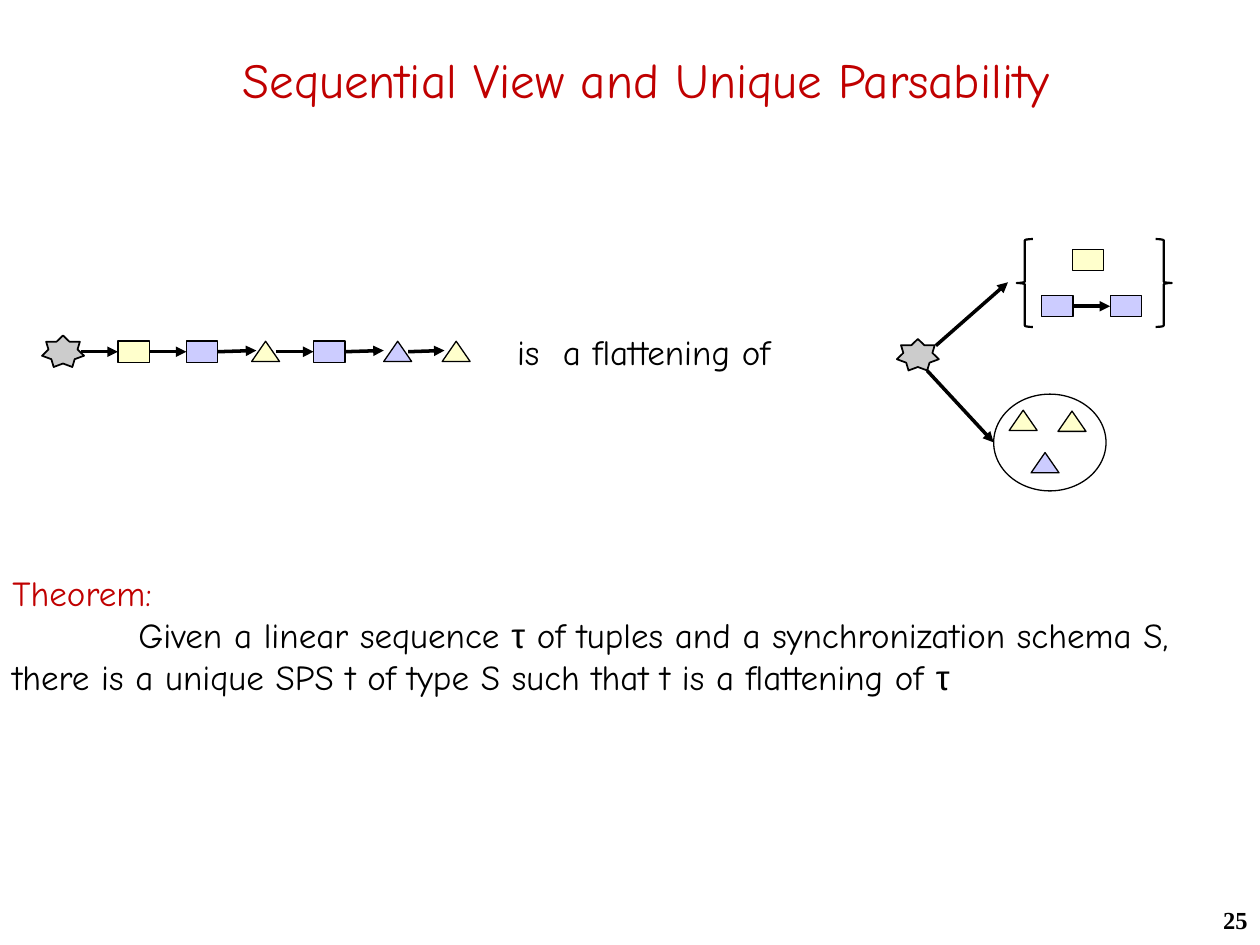
from dataclasses import dataclass

from lxml import etree
from pptx import Presentation
from pptx.dml.color import RGBColor
from pptx.enum import shapes as s, text as t
from pptx.oxml import ns
from pptx.util import Pt


@dataclass(frozen=True)
class Theme:
    ink: str = "000000"
    accent: str = "C00000"
    yellow: str = "FFFFCC"
    blue: str = "CCCCFF"
    grey: str = "CCCCCC"
    body_font: str = "Comic Neue"
    greek_font: str = "Arial"
    number_font: str = "Times New Roman"
    title_size: float = 28
    body_size: float = 20
    number_size: float = 14


THEME = Theme()
KIND = s.MSO_SHAPE
STAR = (KIND.STAR_7_POINT, 24, 18, THEME.grey, 1)
YELLOW_BOX = (KIND.RECTANGLE, 18, 12.2, THEME.yellow, 0.75)
BLUE_BOX = (KIND.RECTANGLE, 18, 12.2, THEME.blue, 0.75)
YELLOW_TRIANGLE = (KIND.ISOSCELES_TRIANGLE, 16, 11.6, THEME.yellow, 0.75)
BLUE_TRIANGLE = (KIND.ISOSCELES_TRIANGLE, 16, 11.6, THEME.blue, 0.75)
ARROW_RUN, ARROW_RISE = 20.8, 0.7


def write(slide, box, paragraphs, size=THEME.body_size, color=THEME.ink,
          font=THEME.body_font, bold=False, align=t.PP_ALIGN.LEFT,
          anchor=t.MSO_ANCHOR.TOP, tab=None):
    frame = slide.shapes.add_textbox(*map(Pt, box)).text_frame
    frame.word_wrap = True
    frame.vertical_anchor = anchor
    for index, pieces in enumerate(paragraphs):
        paragraph = frame.paragraphs[0] if index == 0 else frame.add_paragraph()
        paragraph.alignment = align
        if tab:
            stops = etree.SubElement(paragraph._p.get_or_add_pPr(), ns.qn("a:tabLst"))
            etree.SubElement(stops, ns.qn("a:tab"), pos=str(Pt(tab)), algn="l")
        for words, changes in pieces:
            run = paragraph.add_run()
            run.text = words
            run.font.name = changes.get("font", font)
            run.font.size = Pt(size)
            run.font.bold = bold
            run.font.color.rgb = RGBColor.from_string(changes.get("color", color))


def draw(canvas, left, top, look):
    kind, width, height, fill, line = look
    node = canvas.add_shape(kind, Pt(left), Pt(top), Pt(width), Pt(height))
    node.shadow.inherit = False
    if fill:
        node.fill.solid()
        node.fill.fore_color.rgb = RGBColor.from_string(fill)
    else:
        node.fill.background()
    node.line.color.rgb = RGBColor.from_string(THEME.ink)
    node.line.width = Pt(line)
    return node


def arrow(canvas, start, end, source=None, target=None):
    link = canvas.add_connector(s.MSO_CONNECTOR.STRAIGHT, *map(Pt, start + end))
    link.line.color.rgb = RGBColor.from_string(THEME.ink)
    link.line.width = Pt(2)
    properties = link._element.spPr
    etree.SubElement(properties.get_or_add_ln(), ns.qn("a:tailEnd"), type="triangle")
    etree.SubElement(properties, ns.qn("a:effectLst"))
    if source is not None:
        link.begin_connect(source, 3)
    if target is not None:
        link.end_connect(target, 1)


def short_arrow(canvas, left, top, source=None, target=None):
    arrow(canvas, (left, top), (left + ARROW_RUN, top - ARROW_RISE), source, target)


def draw_sequence(slide):
    canvas = slide.shapes.add_group_shape().shapes
    tuples = [(24, 191.7, STAR), (67.4, 194.9, YELLOW_BOX), (106.5, 194.9, BLUE_BOX),
              (143.8, 195, YELLOW_TRIANGLE), (179.2, 194.9, BLUE_BOX),
              (219.3, 195, BLUE_TRIANGLE), (252.7, 195, YELLOW_TRIANGLE)]
    nodes = [draw(canvas, *place) for place in tuples]
    boxes = [node if place[2][0] == KIND.RECTANGLE else None
             for node, place in zip(nodes, tuples)]
    starts = [46.2, 86.4, 125.7, 157.7, 198.5, 233.2]
    for left, source, target in zip(starts, boxes, boxes[1:]):
        short_arrow(canvas, left, 201, source, target)


def draw_series_parallel(slide):
    canvas = slide.shapes
    draw(canvas, 567.8, 225.2, (KIND.OVAL, 64.2, 55.3, None, 0.75))
    for left, top, look in [(589.2, 258.6, BLUE_TRIANGLE),
                            (576.7, 234.4, YELLOW_TRIANGLE),
                            (604.6, 234.9, YELLOW_TRIANGLE),
                            (512.5, 193.7, STAR), (612.8, 142.5, YELLOW_BOX)]:
        draw(canvas, left, top, look)
    first, second = [draw(canvas, left, 168.9, BLUE_BOX) for left in (595.2, 634.4)]
    short_arrow(canvas, 614.2, 175.6, first, second)
    arrow(canvas, (534.8, 197.5), (576, 161.3))
    arrow(canvas, (529.8, 211.8), (567.8, 252.8))
    for left, brace in [(581, KIND.LEFT_BRACE), (660.4, KIND.RIGHT_BRACE)]:
        draw(canvas, left, 136.6, (brace, 9.2, 50.3, None, 1.25))


def main():
    deck = Presentation()
    deck.slide_width, deck.slide_height = Pt(720), Pt(540)
    slide = deck.slides.add_slide(deck.slide_layouts[6])
    greek = ("τ", {"font": THEME.greek_font})
    write(slide, (18, 24, 702, 42), [[("Sequential View and Unique Parsability", {})]],
          size=THEME.title_size, color=THEME.accent,
          align=t.PP_ALIGN.CENTER, anchor=t.MSO_ANCHOR.MIDDLE)
    write(slide, (684, 513.4, 36, 26.6), [[("25", {})]], size=THEME.number_size,
          font=THEME.number_font, bold=True, align=t.PP_ALIGN.RIGHT)
    write(slide, (0, 323, 720, 80), [
        [("Theorem:", {"color": THEME.accent})],
        [("\tGiven a linear sequence ", {}), greek,
         (" of tuples and a synchronization schema S, \tthere is a unique SPS t"
          " of type S such that t is a flattening of ", {}), greek]], tab=72)
    write(slide, (288.4, 185.5, 180, 31.5), [[("is  a flattening of", {})]])
    draw_sequence(slide)
    draw_series_parallel(slide)
    deck.save("out.pptx")


if __name__ == "__main__":
    main()
